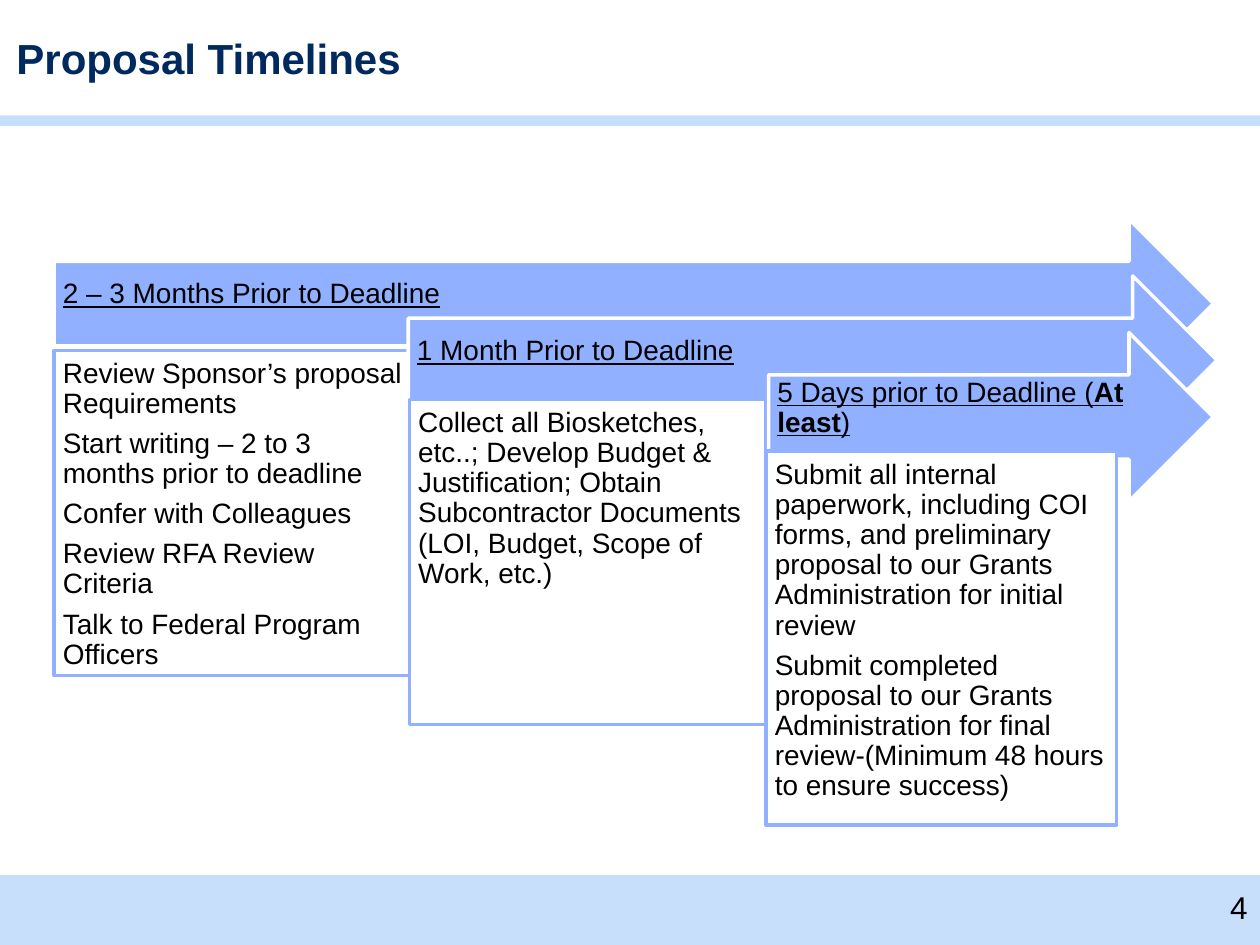
from pptx import Presentation
from pptx.dml.color import RGBColor
from pptx.enum import shapes, text
from pptx.util import Pt

NAVY = RGBColor(0x00, 0x29, 0x60)
BLACK = RGBColor(0x00, 0x00, 0x00)
WHITE = RGBColor(0xFF, 0xFF, 0xFF)
PALE = RGBColor(0xC7, 0xDF, 0xFB)
BLUE = RGBColor(0x91, 0xB0, 0xFF)

W, H = 720, 540
ARROW_H, ARROW_TOP, ARROW_STEP = 96.5, 125.3, 32.4
STAGES = [
    {"arrow": (31, 662.4), "box": (31, 200.2, 203.8, 185.8),
     "heading": [("2 – 3 Months Prior to Deadline", False)],
     "tasks": ["Review Sponsor’s proposal Requirements",
               "Start writing – 2 to 3 months prior to deadline",
               "Confer with Colleagues",
               "Review RFA Review Criteria",
               "Talk to Federal Program Officers"]},
    {"arrow": (233.3, 462.2), "box": (234, 228.2, 203.8, 185.8),
     "heading": [("1 Month Prior to Deadline", False)],
     "tasks": ["Collect all Biosketches, etc..; Develop Budget & Justification; "
               "Obtain Subcontractor Documents (LOI, Budget, Scope of Work, etc.)"]},
    {"arrow": (439.2, 254.2), "box": (437.8, 257.8, 200.2, 213.8),
     "heading": [("5 Days prior to Deadline (", False), ("At least", True), (")", False)],
     "tasks": ["Submit all internal paperwork, including COI forms, and preliminary "
               "proposal to our Grants Administration for initial review",
               "Submit completed proposal to our Grants Administration for final "
               "review-(Minimum 48 hours to ensure success)"]},
]


def set_attrs(obj, **values):
    """Set every given attribute on the object."""
    for name, value in values.items():
        setattr(obj, name, value)


def set_frame(tf, anchor, insets):
    """Wrap the text frame and set its anchor and insets (left, top, right, bottom)."""
    left, top, right, bottom = map(Pt, insets)
    set_attrs(tf, word_wrap=True, vertical_anchor=anchor, margin_left=left,
              margin_top=top, margin_right=right, margin_bottom=bottom)


def add_run(p, words, size, color=BLACK, **font):
    """Add an Arial run to the paragraph."""
    r = p.add_run()
    r.text = words
    set_attrs(r.font, name="Arial", size=Pt(size), **font)
    r.font.color.rgb = color


def add_panel(s, kind, box, fill, line=None):
    """Add a filled shape with an optional outline."""
    sp = s.shapes.add_shape(kind, *map(Pt, box))
    sp.shadow.inherit = False
    sp.fill.solid()
    sp.fill.fore_color.rgb = fill
    if line is None:
        sp.line.fill.background()
    else:
        sp.line.color.rgb = line
        sp.line.width = Pt(2)
    return sp


def fill_text(tf, paragraphs, **font):
    """Write paragraphs given as lists of (words, bold) runs."""
    for i, runs in enumerate(paragraphs):
        p = tf.paragraphs[0] if i == 0 else tf.add_paragraph()
        set_attrs(p, alignment=text.PP_ALIGN.LEFT, line_spacing=0.9, space_after=Pt(5.6))
        for words, bold in runs:
            add_run(p, words, 16, bold=bold, **font)


def add_header(s, box):
    """Place the title and the rule along the bottom of the header."""
    x, y, w, h = box
    add_panel(s, shapes.MSO_SHAPE.RECTANGLE, (x, y + h - 6, w, 6), PALE)
    sp = s.shapes.title
    set_attrs(sp, left=Pt(x + 9.4), top=Pt(y + 18.7), width=Pt(615.6), height=Pt(28.8))
    set_frame(sp.text_frame, text.MSO_ANCHOR.MIDDLE, (0, 0, 0, 0))
    p = sp.text_frame.paragraphs[0]
    p.alignment = text.PP_ALIGN.LEFT
    add_run(p, "Proposal Timelines", 24, NAVY, bold=True)


def add_stage(s, arrow_box, task_box, heading, tasks):
    """Place one timeline arrow and the task box below it."""
    sp = add_panel(s, shapes.MSO_SHAPE.RIGHT_ARROW, arrow_box, BLUE, WHITE)
    set_frame(sp.text_frame, text.MSO_ANCHOR.MIDDLE, (5, 5, 20, 15))
    fill_text(sp.text_frame, [heading], underline=True)
    sp = add_panel(s, shapes.MSO_SHAPE.RECTANGLE, task_box, WHITE, BLUE)
    set_frame(sp.text_frame, text.MSO_ANCHOR.TOP, (5, 5, 5, 5))
    fill_text(sp.text_frame, [[(task, False)] for task in tasks])


def add_footer(s, box):
    """Place the footer band and the slide number."""
    x, y, w, h = box
    add_panel(s, shapes.MSO_SHAPE.RECTANGLE, box, PALE)
    tf = s.shapes.add_textbox(Pt(x), Pt(y + 4), Pt(w), Pt(28.8)).text_frame
    set_frame(tf, text.MSO_ANCHOR.TOP, (7.2, 3.6, 7.2, 3.6))
    p = tf.paragraphs[0]
    p.alignment = text.PP_ALIGN.RIGHT
    add_run(p, "4", 18)


def main():
    """Build and save the slide."""
    prs = Presentation()
    set_attrs(prs, slide_width=Pt(W), slide_height=Pt(H))
    s = prs.slides.add_slide(prs.slide_layouts[5])
    add_header(s, (0, 0, W, 72))
    for i, stage in enumerate(STAGES):
        x, w = stage["arrow"]
        arrow_box = (x, ARROW_TOP + i * ARROW_STEP, w, ARROW_H)
        add_stage(s, arrow_box, stage["box"], stage["heading"], stage["tasks"])
    add_footer(s, (0, 500, W, 40))
    prs.save("out.pptx")


if __name__ == "__main__":
    main()
